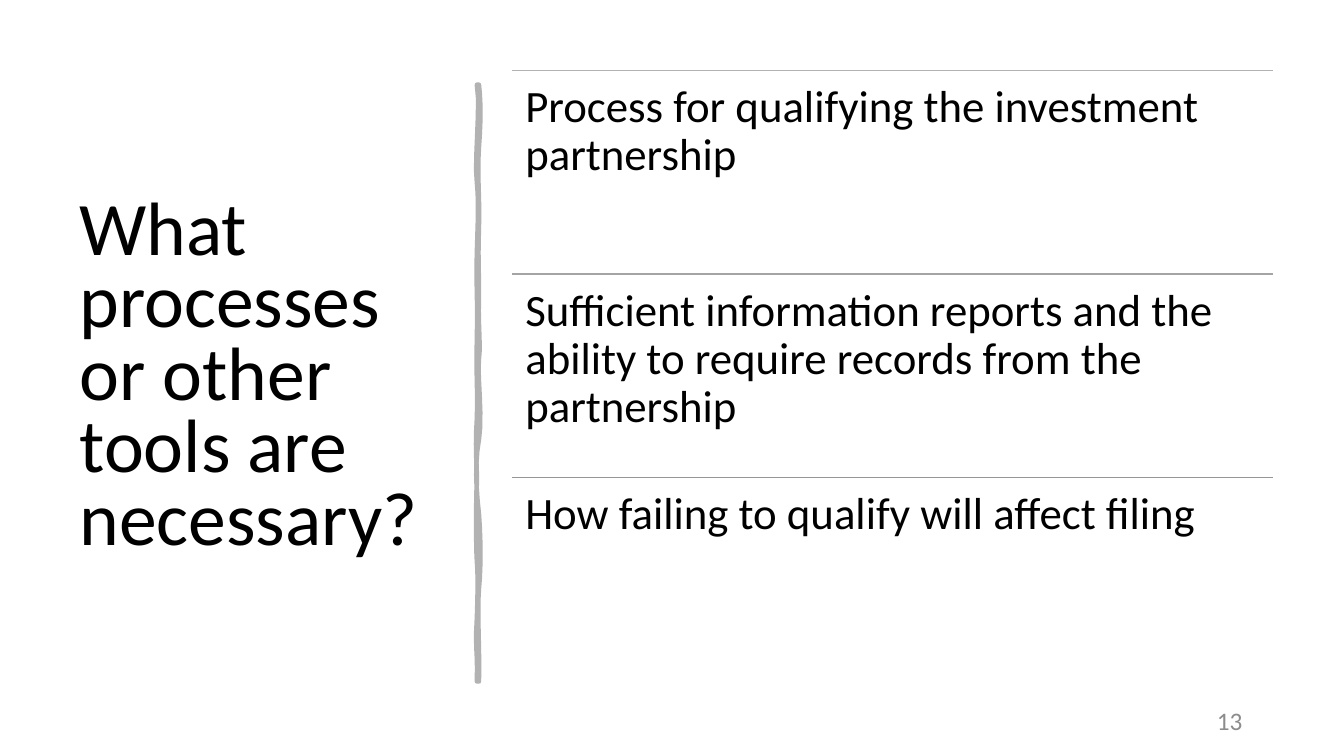
from dataclasses import dataclass

from lxml import etree
from pptx import Presentation
from pptx import util as u
from pptx.dml.color import RGBColor
from pptx.enum import shapes, text
from pptx.oxml.ns import qn

PX = 9144  # EMU per px, 100 px to the inch
FONT = "Calibri"
BLACK = RGBColor(0x00, 0x00, 0x00)
GRAY = RGBColor(0x8C, 0x8C, 0x8C)
LIGHT = RGBColor(0xB2, 0xB2, 0xB2)
MID = RGBColor(0xA4, 0xA4, 0xA4)
DARK = RGBColor(0x96, 0x96, 0x96)

LEFT, TOP, WIDTH, PITCH = 508, 70, 755, 202


@dataclass
class Label:
    words: str
    left: int
    top: int
    width: int
    height: int
    size: int
    color: RGBColor = BLACK
    side: int = 10
    edge: int = 5
    anchor: text.MSO_ANCHOR = text.MSO_ANCHOR.MIDDLE
    align: text.PP_ALIGN = text.PP_ALIGN.LEFT
    spacing: float = 1.0


@dataclass
class Point:
    words: str
    rule: RGBColor


@dataclass
class Curve:
    """A cubic from the last point: two handles, then the end."""
    x1: int
    y1: int
    x2: int
    y2: int
    x: int
    y: int


TITLE = Label("What processes or other tools are necessary?",
              69, 70, 374, 611, 54, spacing=0.8)
NUMBER = Label("13", 942, 695, 300, 40, 18, GRAY,
               align=text.PP_ALIGN.RIGHT)
POINTS = [
    Point("Process for qualifying the investment partnership", LIGHT),
    Point("Sufficient information reports and the ability to require "
          "records from the partnership", MID),
    Point("How failing to qualify will affect filing", DARK),
]
START = (475, 84)
STROKE = [
    Curve(477, 102, 477, 119, 475, 146),
    Curve(473, 173, 476, 195, 475, 226),
    Curve(474, 257, 475, 262, 475, 294),
    Curve(474, 325, 477, 342, 475, 356),
    Curve(473, 370, 479, 414, 475, 436),
    Curve(471, 457, 472, 484, 475, 510),
    Curve(477, 536, 477, 564, 475, 584),
    Curve(473, 603, 476, 650, 475, 676),
    Curve(474, 676, 473, 676, 473, 676),
    Curve(474, 646, 471, 644, 473, 613),
    Curve(474, 583, 474, 570, 473, 557),
    Curve(472, 544, 472, 495, 473, 477),
    Curve(473, 459, 471, 445, 473, 415),
    Curve(474, 386, 472, 373, 473, 335),
    Curve(474, 298, 472, 281, 473, 250),
    Curve(474, 218, 475, 200, 473, 181),
    Curve(470, 163, 477, 104, 473, 84),
]


def add_label(slide, item: Label) -> None:
    box = slide.shapes.add_textbox(item.left * PX, item.top * PX,
                                   item.width * PX, item.height * PX)
    frame = box.text_frame
    frame.word_wrap = True
    frame.vertical_anchor = item.anchor
    frame.margin_left = frame.margin_right = item.side * PX
    frame.margin_top = frame.margin_bottom = item.edge * PX
    para = frame.paragraphs[0]
    para.alignment = item.align
    para.line_spacing = item.spacing
    run = para.add_run()
    run.text = item.words
    run.font.name = FONT
    run.font.size = u.Pt(item.size)
    run.font.color.rgb = item.color


def add_rule(slide, top: int, color: RGBColor) -> None:
    rule = slide.shapes.add_connector(
        shapes.MSO_CONNECTOR.STRAIGHT, LEFT * PX, top * PX,
        (LEFT + WIDTH) * PX, top * PX)
    rule.line.color.rgb = color
    rule.line.width = u.Pt(1)
    etree.SubElement(rule._element.spPr, qn("a:effectLst"))


def trace(start: tuple[int, int], curves: list[Curve],
          steps: int = 6) -> list[tuple[float, float]]:
    """Turn a chain of cubics into short straight steps."""
    dots = []
    x, y = start
    for c in curves:
        for step in range(1, steps + 1):
            t = step / steps
            s = 1 - t
            a, b, d, e = s ** 3, 3 * s * s * t, 3 * s * t * t, t ** 3
            dots.append((a * x + b * c.x1 + d * c.x2 + e * c.x,
                         a * y + b * c.y1 + d * c.y2 + e * c.y))
        x, y = c.x, c.y
    return dots


def add_stroke(slide) -> None:
    dots = [(x * PX, y * PX) for x, y in trace(START, STROKE)]
    pen = slide.shapes.build_freeform(START[0] * PX, START[1] * PX)
    pen.add_line_segments(dots, close=True)
    shape = pen.convert_to_shape()
    shape.shadow.inherit = False
    shape.fill.solid()
    shape.fill.fore_color.rgb = LIGHT
    shape.line.color.rgb = LIGHT
    shape.line.width = u.Pt(3.25)


def main() -> None:
    deck = Presentation()
    deck.slide_width, deck.slide_height = 1333 * PX, 750 * PX
    slide = deck.slides.add_slide(deck.slide_layouts[6])
    add_label(slide, TITLE)
    add_stroke(slide)
    add_label(slide, NUMBER)
    for i, point in enumerate(POINTS):
        top = TOP + i * PITCH
        add_rule(slide, top, point.rule)
        add_label(slide, Label(point.words, LEFT, top, WIDTH, PITCH, 32,
                               side=13, edge=13, spacing=0.9,
                               anchor=text.MSO_ANCHOR.TOP))
    deck.save("out.pptx")


if __name__ == "__main__":
    main()
